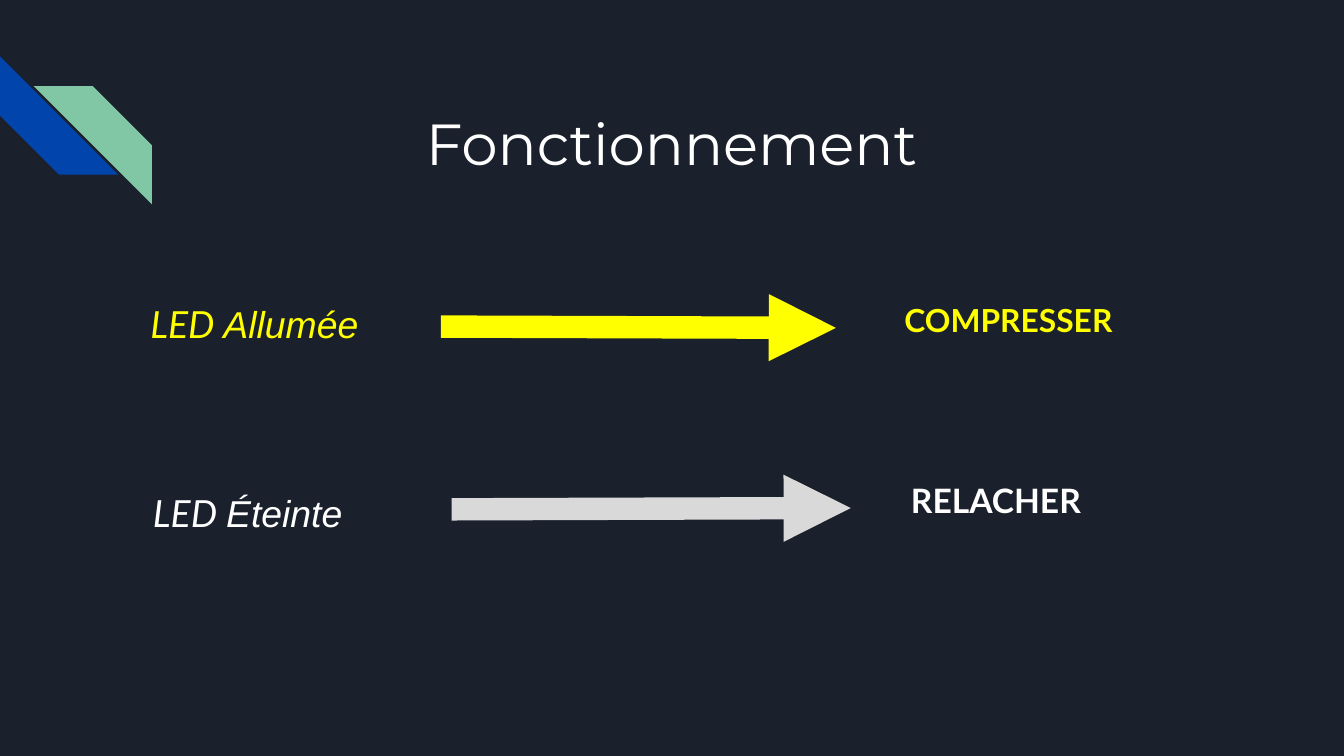
"""Build the slide that pairs each LED state with its action."""
from lxml.etree import SubElement
from pptx import Presentation
from pptx.dml.color import RGBColor as RGB
from pptx.enum.shapes import MSO_CONNECTOR as Link, MSO_SHAPE as Form
from pptx.enum.text import PP_ALIGN as Align
from pptx.oxml.ns import qn
from pptx.util import Inches, Pt

THEME = {
    "back": "1B212C", "blue": "0145AC", "green": "82C7A5",
    "white": "FFFFFF", "yellow": "FFFF00", "gray": "D9D9D9",
    "head": "Montserrat", "body": "Lato", "alt": "Arial",
    "title": 31, "state": 20, "small": 17, "large": 18, "line": 12,
}

TITLE = ("Fonctionnement", (2.04, 0.7, 5.91, 0.78))
STRIPES = [
    ("blue", 0, 0.42, 270, False),
    ("green", 0.25, 0.64, 0, True),
]
SIDE = 0.88
ROWS = [
    {"state": "Allumée", "place": (1.02, 2.14, 1.85, 0.49),
     "ends": (3.28, 2.43, 6.22, 2.44), "ink": "yellow", "line": "yellow",
     "act": "COMPRESSER", "spot": (6.63, 2.14, 1.85, 0.78), "size": "small"},
    {"state": "Éteinte", "place": (1.04, 3.55, 1.8, 0.64),
     "ends": (3.36, 3.79, 6.33, 3.78), "ink": "white", "line": "gray",
     "act": "RELACHER", "spot": (6.68, 3.47, 1.8, 0.78), "size": "large"},
]


def color(name):
    return RGB.from_string(THEME[name])


def add_text(slide, box, runs, size, ink, bold=False, italic=False, align=Align.LEFT):
    frame = slide.shapes.add_textbox(*map(Inches, box)).text_frame
    frame.word_wrap = True
    frame.margin_left = frame.margin_right = Inches(0.1)
    frame.margin_top = frame.margin_bottom = Inches(0.1)
    para = frame.paragraphs[0]
    para.alignment = align
    for text, face in runs:
        run = para.add_run()
        run.text = text
        font = run.font
        font.name, font.size = THEME[face], Pt(THEME[size])
        font.bold, font.italic = bold, italic
        font.color.rgb = color(ink)


def add_stripe(slide, ink, left, top, turn, flip):
    box = map(Inches, (left, top, SIDE, SIDE))
    stripe = slide.shapes.add_shape(Form.DIAGONAL_STRIPE, *box)
    stripe.adjustments[0] = 0.5
    stripe.rotation = turn
    stripe.shadow.inherit = False
    stripe.fill.solid()
    stripe.fill.fore_color.rgb = color(ink)
    stripe.line.fill.background()
    if flip:
        stripe.element.spPr.find(qn("a:xfrm")).set("flipH", "1")


def add_arrow(slide, ends, ink):
    arrow = slide.shapes.add_connector(Link.STRAIGHT, *map(Inches, ends))
    arrow.line.color.rgb = color(ink)
    arrow.line.width = Pt(THEME["line"])
    props = arrow.element.spPr
    SubElement(props.find(qn("a:ln")), qn("a:tailEnd"), type="triangle")
    SubElement(props, qn("a:effectLst"))


def main():
    deck = Presentation()
    deck.slide_width = Inches(10)
    deck.slide_height = deck.slide_width * 9 // 16
    slide = deck.slides.add_slide(deck.slide_layouts[6])
    slide.background.fill.solid()
    slide.background.fill.fore_color.rgb = color("back")
    for stripe in STRIPES:
        add_stripe(slide, *stripe)
    text, box = TITLE
    add_text(slide, box, [(text, "head")], "title", "white", align=Align.CENTER)
    for row in ROWS:
        runs = [("LED ", "body"), (row["state"], "alt")]
        add_text(slide, row["place"], runs, "state", row["ink"], italic=True)
        add_arrow(slide, row["ends"], row["line"])
        act = [(row["act"], "body")]
        add_text(slide, row["spot"], act, row["size"], row["ink"], bold=True)
    deck.save("out.pptx")


if __name__ == "__main__":
    main()
